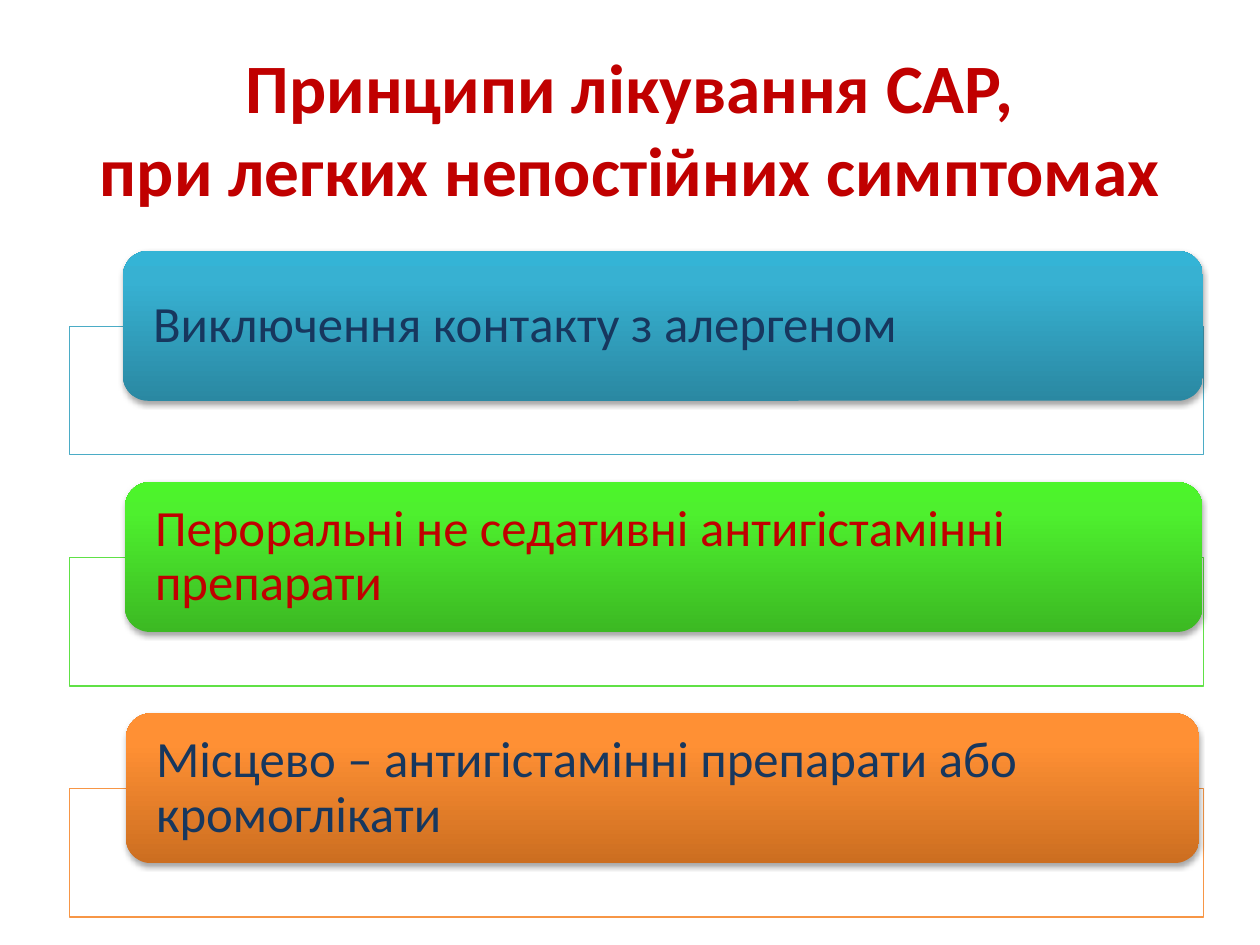
from copy import deepcopy

from lxml.etree import SubElement
from pptx import Presentation
from pptx.dml.color import RGBColor
from pptx.enum.shapes import MSO_SHAPE
from pptx.enum.text import MSO_ANCHOR, MSO_AUTO_SIZE, PP_ALIGN
from pptx.oxml.ns import qn
from pptx.util import Cm, Pt

FONT = "Calibri"
WHITE = RGBColor(0xFF, 0xFF, 0xFF)
RED = RGBColor(0xC0, 0x00, 0x00)
NAVY = RGBColor(0x17, 0x37, 0x5E)
BLUE_LINE = RGBColor(0x4B, 0xAC, 0xC6)
GREEN_LINE = RGBColor(0x60, 0xE1, 0x46)
ORANGE_LINE = RGBColor(0xF7, 0x96, 0x46)
BLUES = [RGBColor(0x2A, 0x88, 0xA2), RGBColor(0x37, 0xB1, 0xD2), RGBColor(0x34, 0xB4, 0xD6)]
GREENS = [RGBColor(0x3C, 0xB9, 0x23), RGBColor(0x4E, 0xF0, 0x2E), RGBColor(0x4C, 0xF5, 0x2A)]
ORANGES = [RGBColor(0xCC, 0x6E, 0x20), RGBColor(0xFF, 0x90, 0x34), RGBColor(0xFF, 0x91, 0x36)]
STOPS = [0, 0.8, 1]

FIRST_TOP, STEP = 5.06, 4.66
FRAME_DROP = 1.52

# text, text colour, frame line, gradient, card left, card width
PRINCIPLES = [
    ("Виключення контакту з алергеном", NAVY, BLUE_LINE, BLUES, 2.48, 21.77),
    ("Пероральні не седативні антигістамінні препарати", RED, GREEN_LINE, GREENS, 2.52, 21.72),
    ("Місцево – антигістамінні препарати або кромоглікати", NAVY, ORANGE_LINE, ORANGES, 2.54, 21.64),
]


def set_title(slide, text):
    title = slide.shapes.title
    title.left, title.top, title.width, title.height = Cm(1.27), Cm(0.76), Cm(22.86), Cm(3.61)
    tf = title.text_frame
    tf.auto_size = MSO_AUTO_SIZE.NONE
    tf.vertical_anchor = MSO_ANCHOR.MIDDLE
    tf.text = text
    p = tf.paragraphs[0]
    p.alignment = PP_ALIGN.CENTER
    p.font.name, p.font.size, p.font.bold = FONT, Pt(39.6), True
    p.font.color.rgb = RED


def fill_gradient(sp, colors):
    """Fill from bottom to top with three colours."""
    sp.fill.gradient()
    sp.fill.gradient_angle = 90
    stop_list = sp.element.spPr.find(".//" + qn("a:gsLst"))
    stop_list.append(deepcopy(stop_list[-1]))
    for stop, position, color in zip(sp.fill.gradient_stops, STOPS, colors):
        stop.position = position
        stop.color.rgb = color


def add_soft_shadow(sp):
    sp.shadow.inherit = False
    effects = sp.element.spPr.find(qn("a:effectLst"))
    shadow = SubElement(effects, qn("a:outerShdw"), blurRad=str(Pt(3.1)),
                        dist=str(Pt(1.8)), dir="5400000", rotWithShape="0")
    color = SubElement(shadow, qn("a:srgbClr"), val="000000")
    SubElement(color, qn("a:alpha"), val="35000")


def add_frame(slide, top, color):
    sp = slide.shapes.add_shape(MSO_SHAPE.RECTANGLE, Cm(1.4), Cm(top), Cm(22.86), Cm(2.59))
    sp.shadow.inherit = False
    sp.fill.solid()
    sp.fill.fore_color.rgb = WHITE
    sp.line.color.rgb = color
    sp.line.width = Pt(0.75)


def add_card(slide, left, top, width, text, text_color, colors):
    sp = slide.shapes.add_shape(MSO_SHAPE.ROUNDED_RECTANGLE, Cm(left), Cm(top), Cm(width), Cm(3.02))
    fill_gradient(sp, colors)
    sp.line.fill.background()
    add_soft_shadow(sp)
    tf = sp.text_frame
    tf.word_wrap = True
    tf.vertical_anchor = MSO_ANCHOR.MIDDLE
    # The rounded corners add their own inset to the left and right margins.
    tf.margin_left = tf.margin_right = Cm(0.46)
    tf.margin_top = tf.margin_bottom = 0
    tf.text = text
    p = tf.paragraphs[0]
    p.alignment = PP_ALIGN.LEFT
    p.line_spacing = 0.9
    p.font.name, p.font.size = FONT, Pt(29)
    p.font.color.rgb = text_color


def main():
    prs = Presentation()
    prs.slide_width, prs.slide_height = Cm(25.4), Cm(19.05)
    slide = prs.slides.add_slide(prs.slide_layouts[5])
    set_title(slide, "Принципи лікування САР,\vпри легких непостійних симптомах")
    for i, (text, text_color, line_color, colors, left, width) in enumerate(PRINCIPLES):
        top = FIRST_TOP + i * STEP
        add_frame(slide, top + FRAME_DROP, line_color)
        add_card(slide, left, top, width, text, text_color, colors)
    prs.save("out.pptx")


if __name__ == "__main__":
    main()
